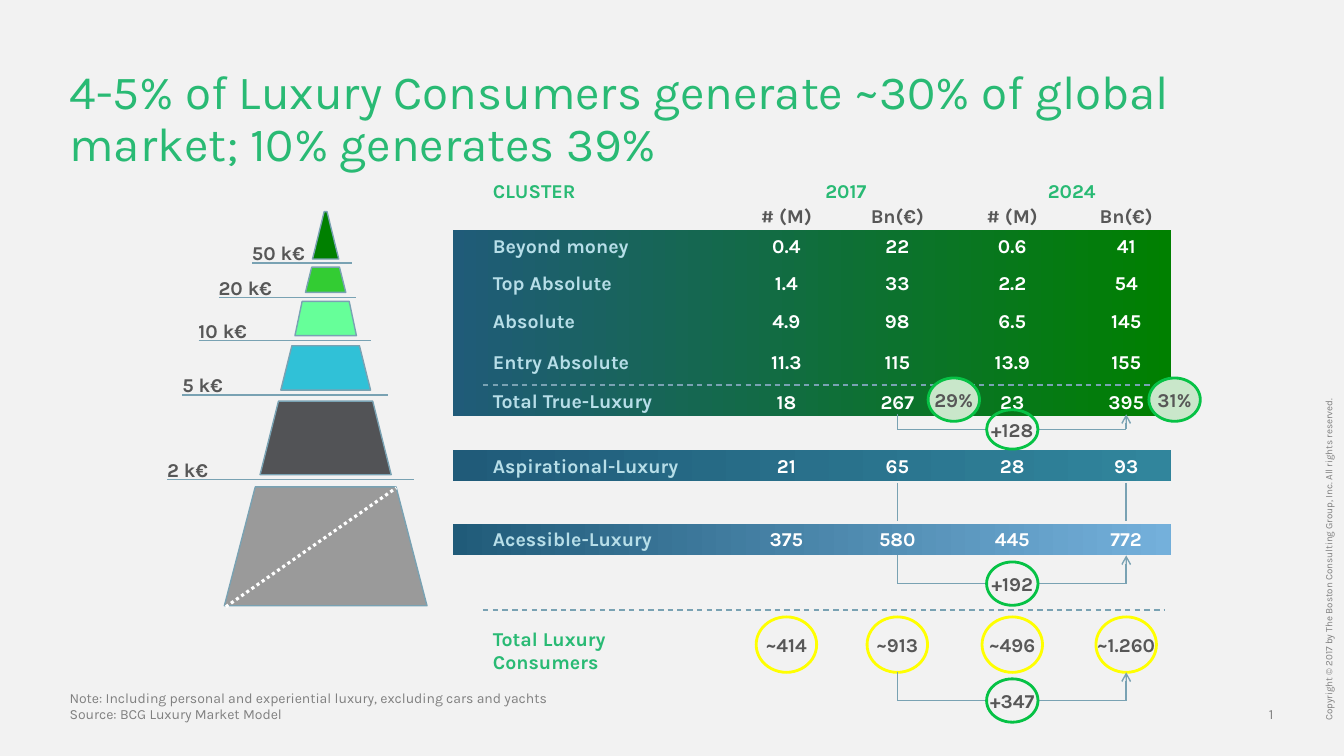
"""Build the luxury consumer pyramid slide on a grid of tenth-of-an-inch cells."""
from lxml import etree
from pptx import Presentation
from pptx.dml.color import RGBColor
from pptx.enum.dml import MSO_LINE
from pptx.enum.shapes import MSO_CONNECTOR, MSO_SHAPE
from pptx.enum.text import MSO_ANCHOR, PP_ALIGN
from pptx.oxml.ns import qn
from pptx.util import Inches, Pt

COLORS = {
    "page": "F2F2F2", "brand": "29BA74", "ink": "575757", "note": "808080",
    "white": "FFFFFF", "pale": "B7DEE8", "rule": "79A2B3", "navy": "205B79",
    "forest": "008000", "teal": "31859C", "sky": "74B0DB", "ring": "06C245",
    "mint": "C9E7CA", "yellow": "FFFF00", "lime": "33CC33", "spring": "66FF99",
    "aqua": "30C1D7", "slate": "525356", "grey": "9A9A9A",
}
CELL = Inches(0.1)
COLUMNS = (78, 89, 100.4, 111.7)
CLUSTER_LEFT = 47.9
DIVIDER = (CLUSTER_LEFT, 115.5)
BAND_LEFT, BAND_WIDTH = 44.9, 71.2
PYRAMID_AXIS = 32.3

BANDS = ((22.8, 18.5, "forest"), (44.6, 3.1, "teal"), (52, 3.1, "sky"))
CLUSTERS = (
    (24.4, "Beyond money", ("0.4", "22", "0.6", "41")),
    (28, "Top Absolute", ("1.4", "33", "2.2", "54")),
    (31.8, "Absolute", ("4.9", "98", "6.5", "145")),
    (35.9, "Entry Absolute", ("11.3", "115", "13.9", "155")),
    (39.8, "Total True-Luxury", ("18", "267", "23", "395")),
    (46.2, "Aspirational-Luxury", ("21", "65", "28", "93")),
    (53.4, "Acessible-Luxury", ("375", "580", "445", "772")),
)
TIERS = (
    ("forest", 21, 2.6, 4.7, 0.445),
    ("lime", 26.5, 4, 2.5, 0.25),
    ("spring", 29.9, 6.1, 3.4, 0.21),
    ("aqua", 34.3, 8.9, 4.4, 0.25),
    ("slate", 39.8, 13, 7.3, 0.25),
    ("grey", 48.3, 20.1, 11.8, 0.26),
)
THRESHOLDS = (
    ("50 k€", 26.1, 25, 34.9),
    ("20 k€", 29.5, 21.7, 35.3),
    ("10 k€", 33.8, 19.7, 36.8),
    ("5 k€", 39.2, 18.1, 38.5),
    ("2 k€", 47.6, 16.6, 41.1),
)
GROWTH = (("+128", 41.1, 42.6, 3.9), ("+192", 55.1, 57.9, 4.3),
          ("+347", 66.7, 69.5, 4.3))


def cells(*lengths):
    """Turn grid cells into slide lengths."""
    return [round(length * CELL) for length in lengths]


def color(name):
    """Look up a palette colour."""
    return RGBColor.from_string(COLORS[name])


def write(frame, text, size, ink, bold=False, align=PP_ALIGN.LEFT,
          anchor=MSO_ANCHOR.MIDDLE, inset=0, spacing=None):
    """Fill a text frame and format every run."""
    frame.text = text
    frame.vertical_anchor = anchor
    frame.margin_left = frame.margin_right = cells(inset)[0]
    frame.margin_top = frame.margin_bottom = 0
    for paragraph in frame.paragraphs:
        paragraph.alignment = align
        paragraph.line_spacing = spacing
        for run in paragraph.runs:
            run.font.name, run.font.size, run.font.bold = "Karla", Pt(size), bold
            run.font.color.rgb = color(ink)


def add_text(slide, left, top, width, height, text, size, ink, **style):
    """Place a wrapping text box."""
    box = slide.shapes.add_textbox(*cells(left, top, width, height))
    box.text_frame.word_wrap = True
    write(box.text_frame, text, size, ink, **style)
    return box


def add_label(slide, left, middle, text, ink):
    """Place a bold row label centred on a height."""
    add_text(slide, left, middle - 2.5, 26, 5, text, 14, ink, bold=True, inset=1)


def add_value(slide, center, middle, text, ink="white"):
    """Place a bold centred value on a column."""
    add_text(slide, center - 5.2, middle - 1.55, 10.4, 3.1, text, 14, ink,
             bold=True, align=PP_ALIGN.CENTER)


def add_line(slide, start, end, ink="rule", width=1, dash=None, arrow=False):
    """Draw a straight line, with an arrowhead at its start if asked."""
    line = slide.shapes.add_connector(MSO_CONNECTOR.STRAIGHT,
                                      *cells(*start, *end))
    line.line.color.rgb = color(ink)
    line.line.width = Pt(width)
    if dash:
        line.line.dash_style = dash
    if arrow:
        etree.SubElement(line.line._get_or_add_ln(), qn("a:headEnd"), type="arrow")
    etree.SubElement(line._element.spPr, qn("a:effectLst"))


def add_solid(slide, kind, left, top, width, height, fill=None, outline=None,
              weight=1):
    """Draw a preset shape without a shadow."""
    solid = slide.shapes.add_shape(kind, *cells(left, top, width, height))
    solid.shadow.inherit = False
    if fill:
        solid.fill.solid()
        solid.fill.fore_color.rgb = color(fill)
    else:
        solid.fill.background()
    if outline:
        solid.line.color.rgb = color(outline)
        solid.line.width = Pt(weight)
    else:
        solid.line.fill.background()
    return solid


def add_band(slide, top, height, end):
    """Draw a table band that fades from navy to another colour."""
    band = add_solid(slide, MSO_SHAPE.RECTANGLE, BAND_LEFT, top, BAND_WIDTH, height)
    band.fill.gradient()
    band.fill.gradient_angle = 0
    for stop, name, position in zip(band.fill.gradient_stops, ("navy", end), (0, 1)):
        stop.color.rgb = color(name)
        stop.position = position


def add_bubble(slide, center, middle, width, height, text, outline, fill=None):
    """Draw a ringed figure around a centre."""
    bubble = add_solid(slide, MSO_SHAPE.OVAL, center - width / 2,
                       middle - height / 2, width, height, fill, outline, 2)
    bubble.text_frame.word_wrap = False
    write(bubble.text_frame, text, 14, "ink", bold=True, align=PP_ALIGN.CENTER)


def add_growth(slide, text, top, bottom, height):
    """Link the two value columns by a bracket that carries the increase."""
    _, before, middle, after = COLUMNS
    add_line(slide, (before, top), (before, bottom))
    add_line(slide, (after, top), (after, bottom), arrow=True)
    add_line(slide, (before, bottom), (middle - 2.55, bottom))
    add_line(slide, (middle + 2.55, bottom), (after, bottom))
    add_bubble(slide, middle, bottom, 5.1, height, text, "ring")


def add_pyramid(slide):
    """Draw the tiers and the spending thresholds between them."""
    for fill, top, width, height, slant in TIERS:
        tier = add_solid(slide, MSO_SHAPE.TRAPEZOID, PYRAMID_AXIS - width / 2,
                         top, width, height, fill, "rule")
        tier.adjustments[0] = slant
    for text, level, left, right in THRESHOLDS:
        add_line(slide, (left, level), (right, level))
        add_label(slide, left - 1, level - 1, text, "ink")
    add_line(slide, (22.4, 60.2), (39.3, 48.4), "white", 2.25, MSO_LINE.ROUND_DOT)


def add_clusters(slide):
    """Lay out the headings, bands, figures and totals of the clusters."""
    for band in BANDS:
        add_band(slide, *band)
    add_label(slide, CLUSTER_LEFT, 18.9, "CLUSTER", "brand")
    for center, year in ((83.9, "2017"), (106.3, "2024")):
        add_value(slide, center, 18.9, year, "brand")
    for center, unit in zip(COLUMNS, ("# (M)", "Bn(€)") * 2):
        add_value(slide, center, 21.4, unit, "ink")
    for middle, cluster, figures in CLUSTERS:
        add_label(slide, CLUSTER_LEFT, middle, cluster, "pale")
        for center, figure in zip(COLUMNS, figures):
            add_value(slide, center, middle, figure)
    for level in (38.2, 60.5):
        add_line(slide, (DIVIDER[0], level), (DIVIDER[1], level), dash=MSO_LINE.DASH)
    for center in COLUMNS[1::2]:
        add_line(slide, (center, 47.9), (center, 51.7))
    add_label(slide, CLUSTER_LEFT, 64.5, "Total Luxury\nConsumers", "brand")
    for center, total in zip(COLUMNS, ("~414", "~913", "~496", "~1.260")):
        add_bubble(slide, center, 63.95, 6, 5.5, total, "yellow")
    for increase in GROWTH:
        add_growth(slide, *increase)
    for center, share in ((94.6, "29%"), (116.5, "31%")):
        add_bubble(slide, center, 39.65, 5.1, 4.3, share, "ring", "mint")


def main():
    """Build and save the slide."""
    deck = Presentation()
    deck.slide_width, deck.slide_height = Inches(13.33), Inches(7.5)
    slide = deck.slides.add_slide(deck.slide_layouts[6])
    slide.background.fill.solid()
    slide.background.fill.fore_color.rgb = color("page")
    add_text(slide, 6.9, 6.8, 119.6, 10.3,
             "4-5% of Luxury Consumers generate ~30% of global market; "
             "10% generates 39%", 34, "brand", anchor=MSO_ANCHOR.TOP, spacing=0.9)
    add_pyramid(slide)
    add_clusters(slide)
    add_text(slide, 6.9, 66.7, 78.5, 5,
             "Note: Including personal and experiential luxury, excluding cars "
             "and yachts\nSource: BCG Luxury Market Model", 10, "note",
             anchor=MSO_ANCHOR.BOTTOM)
    add_text(slide, 122.1, 70, 4.2, 1.7, "1", 10, "note", align=PP_ALIGN.RIGHT,
             anchor=MSO_ANCHOR.BOTTOM)
    rights = add_text(slide, 103.8, 42.9, 56.1, 1.1,
                      "Copyright © 2017 by The Boston Consulting Group, Inc. "
                      "All rights reserved.", 7, "note",
                      anchor=MSO_ANCHOR.TOP, spacing=0.9)
    rights.rotation = 270
    deck.save("out.pptx")


if __name__ == "__main__":
    main()
